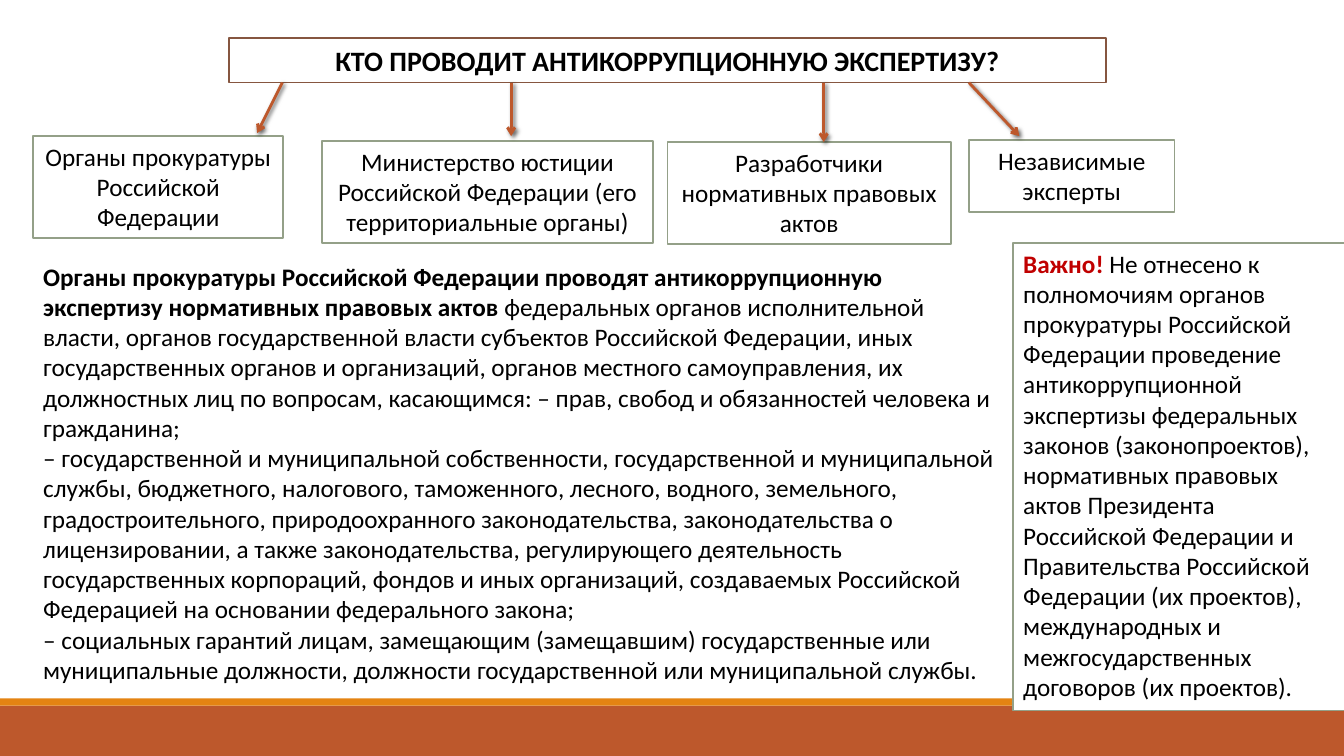
from lxml import etree
from pptx import Presentation
from pptx.dml.color import RGBColor
from pptx.enum.shapes import MSO_CONNECTOR as Connector, MSO_SHAPE as Shape
from pptx.enum.text import MSO_ANCHOR as Anchor, PP_ALIGN as Align
from pptx.oxml import parse_xml
from pptx.oxml.ns import nsdecls, qn
from pptx.util import Inches, Pt

WIDTH, HEIGHT = 13.33, 7.5
RUST, ORANGE, SAGE, BROWN = "BD582C", "E48312", "94A088", "865640"
BLACK, WHITE, RED = "000000", "FFFFFF", "C00000"

TITLE = "КТО ПРОВОДИТ АНТИКОРРУПЦИОННУЮ ЭКСПЕРТИЗУ?"
BODIES = [
    ("Органы прокуратуры Российской Федерации", (0.33, 1.35, 2.48, 1.01)),
    ("Министерство юстиции Российской Федерации (его территориальные органы)",
     (3.19, 1.4, 3.29, 1.01)),
    ("Независимые эксперты", (9.61, 1.39, 2.04, 0.71)),
    ("Разработчики нормативных правовых актов", (6.62, 1.41, 2.81, 1.01)),
]
ARROWS = [(2.8, 2.55, 1.32), (5.07, 5.07, 1.35), (8.17, 8.17, 1.41), (9.61, 10.11, 1.35)]
POWERS = [
    ("Органы прокуратуры Российской Федерации проводят антикоррупционную экспертизу "
     "нормативных правовых актов ",
     "федеральных органов исполнительной власти, органов государственной власти субъектов "
     "Российской Федерации, иных государственных органов и организаций, органов местного "
     "самоуправления, их должностных лиц по вопросам, касающимся: – прав, свобод и "
     "обязанностей человека и гражданина;"),
    ("",
     "– государственной и муниципальной собственности, государственной и муниципальной "
     "службы, бюджетного, налогового, таможенного, лесного, водного, земельного, "
     "градостроительного, природоохранного законодательства, законодательства о "
     "лицензировании, а также законодательства, регулирующего деятельность государственных "
     "корпораций, фондов и иных организаций, создаваемых Российской Федерацией на основании "
     "федерального закона;"),
    ("",
     "– социальных гарантий лицам, замещающим (замещавшим) государственные или "
     "муниципальные должности, должности государственной или муниципальной службы."),
]
WARNING = [
    ("Важно! ",
     "Не отнесено к полномочиям органов прокуратуры Российской Федерации проведение "
     "антикоррупционной экспертизы федеральных законов (законопроектов), нормативных "
     "правовых актов Президента Российской Федерации и Правительства Российской Федерации "
     "(их проектов), международных и межгосударственных договоров (их проектов)."),
]


def rgb(value):
    return RGBColor.from_string(value)


def style_run(run, size, color, bold):
    run.font.name = "Calibri"
    run.font.size = Pt(size)
    run.font.bold = bold
    run.font.color.rgb = rgb(color)


def write(frame, paragraphs, align=Align.LEFT, size=18, lead_color=BLACK):
    frame.word_wrap = True
    frame.vertical_anchor = Anchor.TOP
    for index, (lead, rest) in enumerate(paragraphs):
        paragraph = frame.paragraphs[0] if index == 0 else frame.add_paragraph()
        paragraph.alignment = align
        if lead:
            paragraph.text = lead
            style_run(paragraph.runs[0], size, lead_color, True)
        if rest:
            remainder = paragraph.add_run()
            remainder.text = rest
            style_run(remainder, size, BLACK, False)


def add_panel(slide, box, fill, border=None):
    panel = slide.shapes.add_shape(Shape.RECTANGLE, *map(Inches, box))
    panel.shadow.inherit = False
    panel.fill.solid()
    panel.fill.fore_color.rgb = rgb(fill)
    if border:
        panel.line.color.rgb = rgb(border)
        panel.line.width = Pt(1.25)
    else:
        panel.line.fill.background()
    return panel


def add_footer(slide, box):
    left, top, width, height = box
    stripe = 0.07
    add_panel(slide, (left, top + stripe, width, height - stripe), RUST)
    add_panel(slide, (left, top, width, stripe), ORANGE)


def add_arrow(slide, start, end):
    arrow = slide.shapes.add_connector(Connector.STRAIGHT, *map(Inches, start + end))
    arrow.line.color.rgb = rgb(RUST)
    arrow.line.width = Pt(2)
    etree.SubElement(arrow.line._get_or_add_ln(), qn("a:tailEnd"), type="arrow")
    arrow._element.spPr.append(parse_xml(
        f'<a:effectLst {nsdecls("a")}><a:outerShdw blurRad="{Pt(3)}" dist="{Pt(2)}" '
        f'dir="{45 * 60000}" rotWithShape="0"><a:srgbClr val="{BLACK}">'
        '<a:alpha val="60000"/></a:srgbClr></a:outerShdw></a:effectLst>'))


def add_scheme(slide, title_box):
    title = add_panel(slide, title_box, WHITE, BROWN)
    write(title.text_frame, [(TITLE, "")], Align.CENTER, 20)
    for name, box in BODIES:
        body = add_panel(slide, box, WHITE, SAGE)
        write(body.text_frame, [("", name)], Align.CENTER)
    title_bottom = title_box[1] + title_box[3]
    for start_x, end_x, end_y in ARROWS:
        add_arrow(slide, (start_x, title_bottom), (end_x, end_y))


def add_powers(slide, box):
    powers = slide.shapes.add_textbox(*map(Inches, box))
    write(powers.text_frame, POWERS)


def add_warning(slide, box):
    warning = add_panel(slide, box, WHITE, SAGE)
    write(warning.text_frame, WARNING, lead_color=RED)


def main():
    deck = Presentation()
    deck.slide_width, deck.slide_height = Inches(WIDTH), Inches(HEIGHT)
    slide = deck.slides.add_slide(deck.slide_layouts[6])
    add_footer(slide, (0, 6.93, WIDTH, 0.57))
    add_scheme(slide, (2.27, 0.38, 8.7, 0.44))
    add_powers(slide, (0.33, 2.54, 9.72, 4.34))
    add_warning(slide, (10.05, 2.41, 3.29, 4.64))
    deck.save("out.pptx")


if __name__ == "__main__":
    main()
